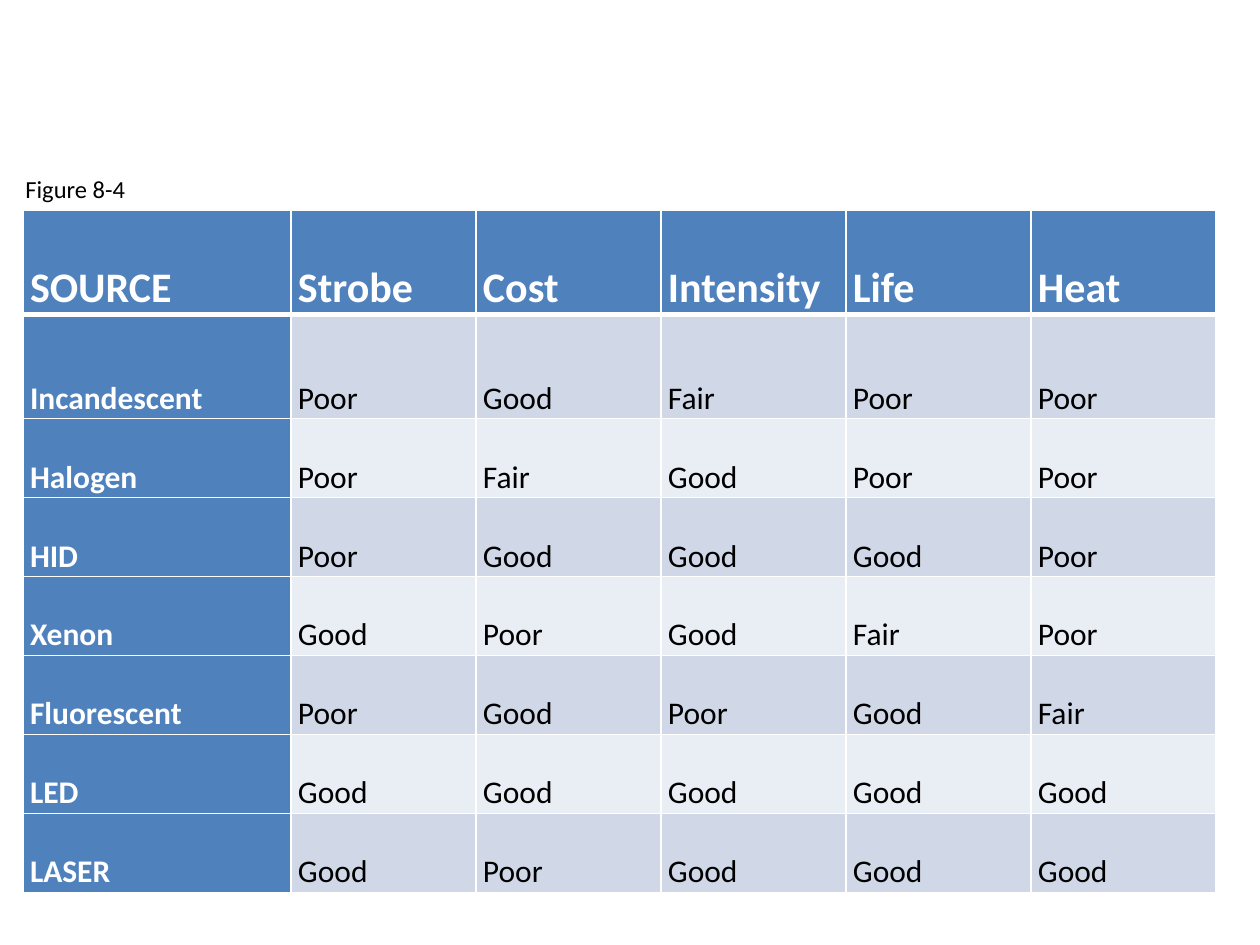
from lxml.etree import SubElement
from pptx import Presentation
from pptx.dml.color import RGBColor
from pptx.enum.text import MSO_ANCHOR, MSO_AUTO_SIZE
from pptx.oxml.ns import qn
from pptx.util import Emu, Pt

CAPTION = "Figure 8-4"
RATINGS = [
    ("SOURCE", "Strobe", "Cost", "Intensity", "Life", "Heat"),
    ("Incandescent", "Poor", "Good", "Fair", "Poor", "Poor"),
    ("Halogen", "Poor", "Fair", "Good", "Poor", "Poor"),
    ("HID", "Poor", "Good", "Good", "Good", "Poor"),
    ("Xenon", "Good", "Poor", "Good", "Fair", "Poor"),
    ("Fluorescent", "Poor", "Good", "Poor", "Good", "Fair"),
    ("LED", "Good", "Good", "Good", "Good", "Good"),
    ("LASER", "Good", "Poor", "Good", "Good", "Good"),
]
COLORS = {
    "header": "4F81BD",
    "odd": "D0D8E8",
    "even": "E9EDF4",
    "border": "FFFFFF",
    "light": "FFFFFF",
    "dark": "000000",
}
FONT = "Calibri"
EMU_PER_PX = 914400 // 126
COLUMN_WIDTHS = [268] + [185] * 5
ROW_HEIGHTS = [104] * 2 + [79] * 6


def px(length):
    return Emu(length * EMU_PER_PX)


def set_text(frame, text, size, color, bold=False):
    paragraph = frame.paragraphs[0]
    paragraph.text = text
    font = paragraph.runs[0].font
    for name, value in {"name": FONT, "size": Pt(size), "bold": bold}.items():
        setattr(font, name, value)
    font.color.rgb = RGBColor.from_string(COLORS[color])
    return paragraph


def set_borders(cell, widths):
    """Draw the cell's sides; widths are points for left, right, top, bottom."""
    properties = cell._tc.get_or_add_tcPr()
    for index, (side, width) in enumerate(zip("LRTB", widths)):
        line = SubElement(properties, qn(f"a:ln{side}"), w=str(Pt(width)))
        fill = SubElement(line, qn("a:solidFill"))
        SubElement(fill, qn("a:srgbClr"), val=COLORS["border"])
        properties.insert(index, line)


def format_cell(cell, text, row, column):
    is_header = row == 0 or column == 0
    cell_format = {
        "vertical_anchor": MSO_ANCHOR.BOTTOM,
        "margin_left": px(7),
        "margin_right": px(7),
        "margin_top": px(1),
        "margin_bottom": px(1),
    }
    for name, value in cell_format.items():
        setattr(cell, name, value)
    fill_name = "header" if is_header else ("odd" if row % 2 else "even")
    cell.fill.solid()
    cell.fill.fore_color.rgb = RGBColor.from_string(COLORS[fill_name])
    set_borders(cell, (1, 1, 3 if row == 1 else 1, 3 if row == 0 else 1))
    paragraph = set_text(cell.text_frame, text, 24 if row == 0 else 18,
                         "light" if is_header else "dark", is_header)
    paragraph.line_spacing = 2.0


def add_ratings_table(slide):
    table = slide.shapes.add_table(
        len(RATINGS), len(COLUMN_WIDTHS), px(23), px(210),
        px(sum(COLUMN_WIDTHS)), px(sum(ROW_HEIGHTS))).table
    for column, width in zip(table.columns, COLUMN_WIDTHS):
        column.width = px(width)
    for row, height in zip(table.rows, ROW_HEIGHTS):
        row.height = px(height)
    for row, texts in enumerate(RATINGS):
        for column, text in enumerate(texts):
            format_cell(table.cell(row, column), text, row, column)


def add_caption(slide):
    frame = slide.shapes.add_textbox(px(13), px(168), px(368), px(42)).text_frame
    frame.word_wrap = True
    frame.auto_size = MSO_AUTO_SIZE.SHAPE_TO_FIT_TEXT
    set_text(frame, CAPTION, 14, "dark")


def main():
    presentation = Presentation()
    presentation.slide_width = px(1260)
    presentation.slide_height = px(945)
    slide = presentation.slides.add_slide(presentation.slide_layouts[6])
    add_ratings_table(slide)
    add_caption(slide)
    presentation.save("out.pptx")


if __name__ == "__main__":
    main()
